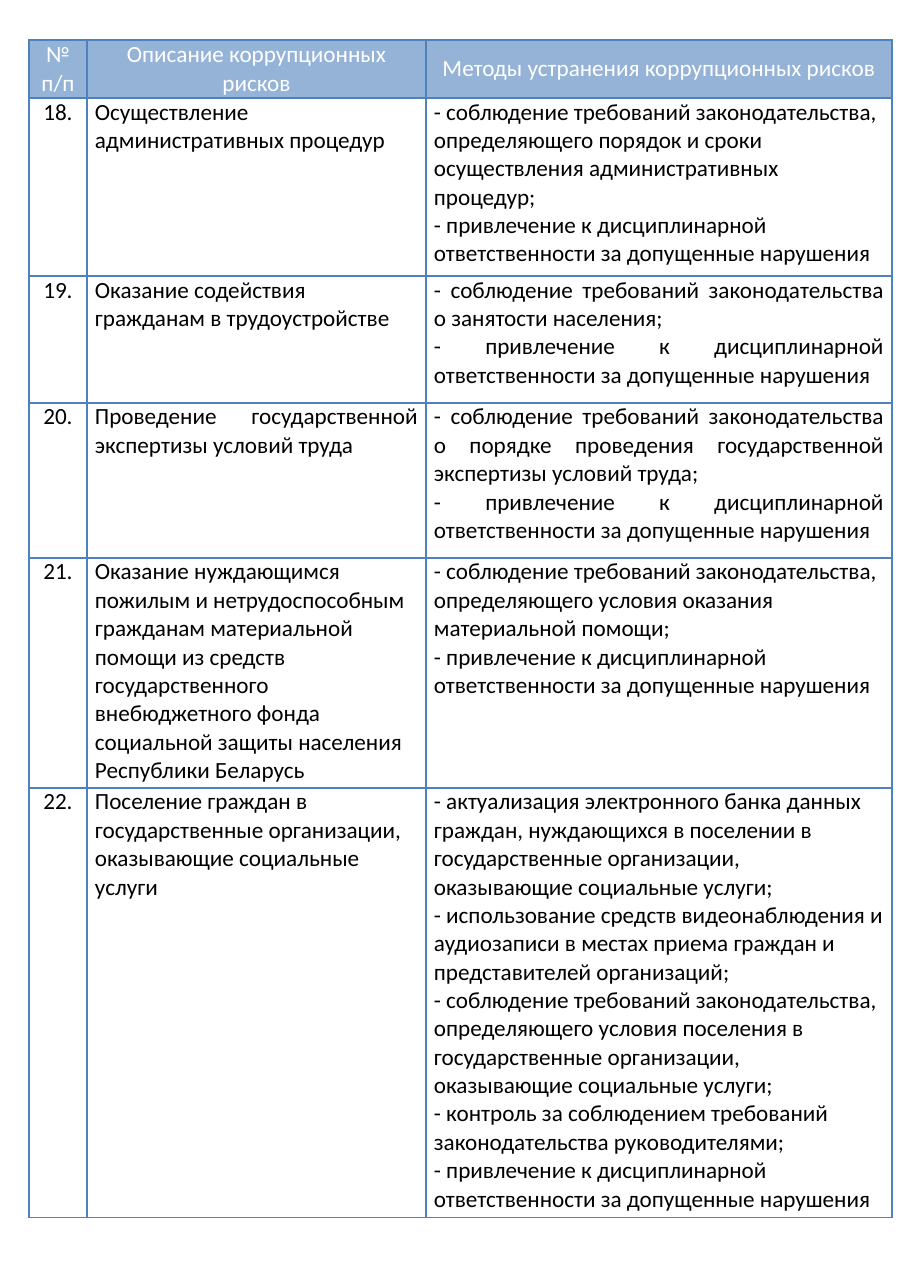
from dataclasses import dataclass

from lxml.etree import SubElement
from pptx import Presentation
from pptx.dml.color import RGBColor
from pptx.enum.text import MSO_ANCHOR, PP_ALIGN
from pptx.oxml.ns import qn
from pptx.util import Pt

PX = 8223
COLORS = {"header": "95B3D7", "border": "4F81BD", "light": "FFFFFF", "dark": "000000"}
FONT = {"name": "Calibri", "size": Pt(15), "bold": False}
FLAGS = {"first_row": False, "horz_banding": False}
COLUMNS = [58, 339, 466]
HEADER_HEIGHT = 58
HEADER = ["№ п/п", "Описание коррупционных рисков", "Методы устранения коррупционных рисков"]
PENALTY = "- привлечение к дисциплинарной ответственности за допущенные нарушения"
LEFT, CENTER, JUSTIFY = PP_ALIGN.LEFT, PP_ALIGN.CENTER, PP_ALIGN.JUSTIFY


@dataclass
class Risk:
    height: int
    text: str
    methods: list[str]
    text_align: PP_ALIGN = LEFT
    methods_align: PP_ALIGN = LEFT


FIRST_NUMBER = 18
RISKS = [
    Risk(178, "Осуществление административных процедур", [
        "- соблюдение требований законодательства, определяющего порядок и сроки "
        "осуществления административных процедур;",
    ]),
    Risk(127, "Оказание содействия гражданам в трудоустройстве", [
        "- соблюдение требований законодательства о занятости населения;",
    ], methods_align=JUSTIFY),
    Risk(155, "Проведение государственной экспертизы условий труда", [
        "- соблюдение требований законодательства о порядке проведения "
        "государственной экспертизы условий труда;",
    ], JUSTIFY, JUSTIFY),
    Risk(230, "Оказание нуждающимся пожилым и нетрудоспособным гражданам материальной "
         "помощи из средств государственного внебюджетного фонда социальной защиты "
         "населения Республики Беларусь", [
             "- соблюдение требований законодательства, определяющего условия оказания "
             "материальной помощи;",
         ]),
    Risk(430, "Поселение граждан в государственные организации, оказывающие "
         "социальные услуги", [
             "- актуализация электронного банка данных граждан, нуждающихся в поселении в "
             "государственные организации, оказывающие социальные услуги;",
             "- использование средств видеонаблюдения и аудиозаписи в местах приема граждан "
             "и представителей организаций;",
             "- соблюдение требований законодательства, определяющего условия поселения в "
             "государственные организации, оказывающие социальные услуги;",
             "- контроль за соблюдением требований законодательства руководителями;",
         ]),
]


def px(n: int) -> int:
    return n * PX


def set_all(target, values: dict) -> None:
    for name, value in values.items():
        setattr(target, name, value)


def add_borders(cell) -> None:
    tc_pr = cell._tc.get_or_add_tcPr()
    for side in ("lnL", "lnR", "lnT", "lnB"):
        ln = SubElement(tc_pr, qn(f"a:{side}"), w=str(Pt(1)))
        fill = SubElement(ln, qn("a:solidFill"))
        SubElement(fill, qn("a:srgbClr"), val=COLORS["border"])


def fill_cell(cell, lines: list[str], align: PP_ALIGN, header: bool = False) -> None:
    add_borders(cell)
    if header:
        cell.fill.solid()
        cell.fill.fore_color.rgb = RGBColor.from_string(COLORS["header"])
    else:
        cell.fill.background()
    inset = px(10 if header else 8)
    set_all(cell, {
        "margin_left": inset, "margin_right": inset, "margin_top": 0, "margin_bottom": 0,
        "vertical_anchor": MSO_ANCHOR.MIDDLE if header else MSO_ANCHOR.TOP,
    })
    tf = cell.text_frame
    for i, line in enumerate(lines):
        p = tf.add_paragraph() if i else tf.paragraphs[0]
        p.alignment = align
        r = p.add_run()
        r.text = line
        set_all(r.font, FONT)
        r.font.color.rgb = RGBColor.from_string(COLORS["light" if header else "dark"])


def add_risk_table(s) -> None:
    heights = [HEADER_HEIGHT] + [risk.height for risk in RISKS]
    table = s.shapes.add_table(len(heights), len(COLUMNS), px(29), px(40),
                               px(sum(COLUMNS)), px(sum(heights))).table
    set_all(table, FLAGS)
    for column, width in zip(table.columns, COLUMNS):
        column.width = px(width)
    for row, height in zip(table.rows, heights):
        row.height = px(height)
    for c, title in enumerate(HEADER):
        fill_cell(table.cell(0, c), [title], CENTER, header=True)
    for i, risk in enumerate(RISKS):
        fill_cell(table.cell(i + 1, 0), [f"{FIRST_NUMBER + i}."], CENTER)
        fill_cell(table.cell(i + 1, 1), [risk.text], risk.text_align)
        fill_cell(table.cell(i + 1, 2), risk.methods + [PENALTY], risk.methods_align)


def main() -> None:
    prs = Presentation()
    set_all(prs, {"slide_width": px(920), "slide_height": px(1288)})
    s = prs.slides.add_slide(prs.slide_layouts[6])
    add_risk_table(s)
    prs.save("out.pptx")


if __name__ == "__main__":
    main()
